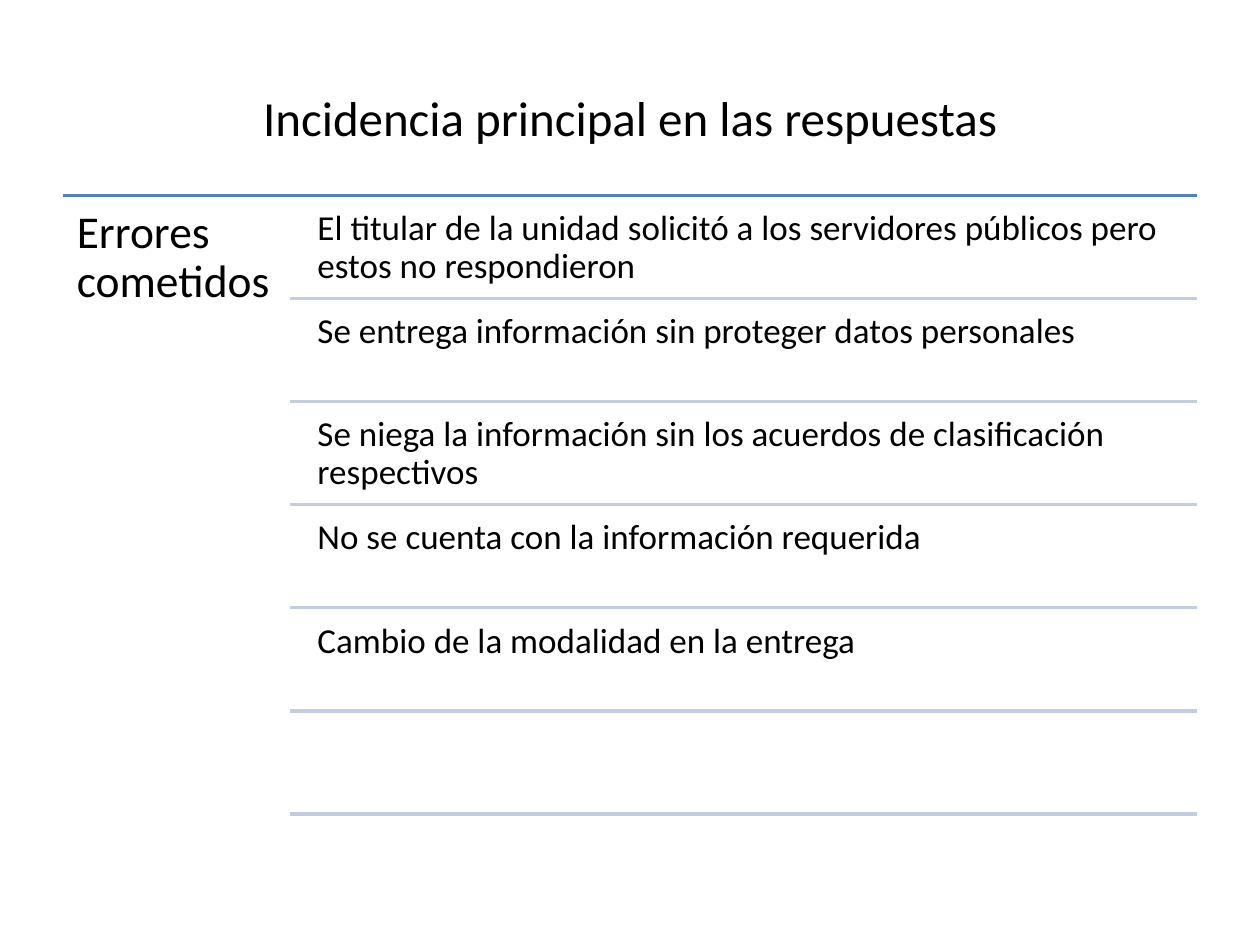
from lxml import etree
from pptx import Presentation
from pptx import util as u
from pptx.dml.color import RGBColor
from pptx.enum import shapes, text
from pptx.oxml.ns import qn

BLACK = RGBColor(0x00, 0x00, 0x00)
WHITE = RGBColor(0xFF, 0xFF, 0xFF)
BLUE = RGBColor(0x4F, 0x81, 0xBD)
PALE_BLUE = RGBColor(0xC2, 0xCD, 0xE1)

ERRORS = [
    "El titular de la unidad solicitó a los servidores públicos pero estos no respondieron",
    "Se entrega información sin proteger datos personales",
    "Se niega la información sin los acuerdos de clasificación respectivos",
    "No se cuenta con la información requerida",
    "Cambio de la modalidad en la entrega",
]
LEFT, RIGHT, TOP, BOTTOM = 0.5, 9.5, 1.55, 6.46
RULE_LEFT, TEXT_LEFT = 2.3, 2.44
ROW_COUNT = 6
ROW_STEP = (BOTTOM - TOP) / ROW_COUNT
ROW_GAP, ROW_HEIGHT = 0.04, 0.78


class SlideBuilder:
    font_name = "Calibri"
    line_width = u.Pt(2)

    def __init__(self, slide):
        self.slide = slide

    def add_text(self, paragraph, words, size):
        run = paragraph.add_run()
        run.text = words
        run.font.name = self.font_name
        run.font.size = u.Pt(size)
        run.font.color.rgb = BLACK

    def title(self, words, left, top, width, height):
        shape = self.slide.shapes.title
        shape.left, shape.top = u.Inches(left), u.Inches(top)
        shape.width, shape.height = u.Inches(width), u.Inches(height)
        shape.text_frame.vertical_anchor = text.MSO_ANCHOR.MIDDLE
        paragraph = shape.text_frame.paragraphs[0]
        paragraph.alignment = text.PP_ALIGN.CENTER
        self.add_text(paragraph, words, 28)

    def text_box(self, words, left, top, width, height, size, margin):
        shape = self.slide.shapes.add_textbox(
            u.Inches(left), u.Inches(top), u.Inches(width), u.Inches(height))
        frame = shape.text_frame
        frame.word_wrap = True
        frame.vertical_anchor = text.MSO_ANCHOR.TOP
        frame.margin_left = frame.margin_right = u.Inches(margin)
        frame.margin_top = frame.margin_bottom = u.Inches(margin)
        paragraph = frame.paragraphs[0]
        paragraph.line_spacing = 0.9
        self.add_text(paragraph, words, size)

    def rule(self, left, right, y, color):
        connector = self.slide.shapes.add_connector(
            shapes.MSO_CONNECTOR.STRAIGHT,
            u.Inches(left), u.Inches(y), u.Inches(right), u.Inches(y))
        connector.line.color.rgb = color
        connector.line.width = self.line_width
        etree.SubElement(connector._element.spPr, qn("a:effectLst"))


def main():
    presentation = Presentation()
    presentation.slide_width = u.Inches(10)
    presentation.slide_height = u.Inches(7.5)
    slide = presentation.slides.add_slide(presentation.slide_layouts[5])
    slide.background.fill.solid()
    slide.background.fill.fore_color.rgb = WHITE
    builder = SlideBuilder(slide)

    # Title and heading column
    builder.title("Incidencia principal en las respuestas", LEFT, 0.3, 9, 1.25)
    builder.rule(LEFT, RIGHT, TOP, BLUE)
    builder.text_box("Errores cometidos", LEFT, TOP, 1.8, 4.95, 26, 0.11)

    # Errors
    for index, error in enumerate(ERRORS):
        top = TOP + ROW_GAP + index * ROW_STEP
        builder.text_box(error, TEXT_LEFT, top, 7.07, ROW_HEIGHT, 20, 0.08)

    # Row rules, the last one closing an empty row
    for index in range(ROW_COUNT):
        row_bottom = TOP + (index + 1) * ROW_STEP
        builder.rule(RULE_LEFT, RIGHT, row_bottom, PALE_BLUE)

    presentation.save("out.pptx")


if __name__ == "__main__":
    main()
